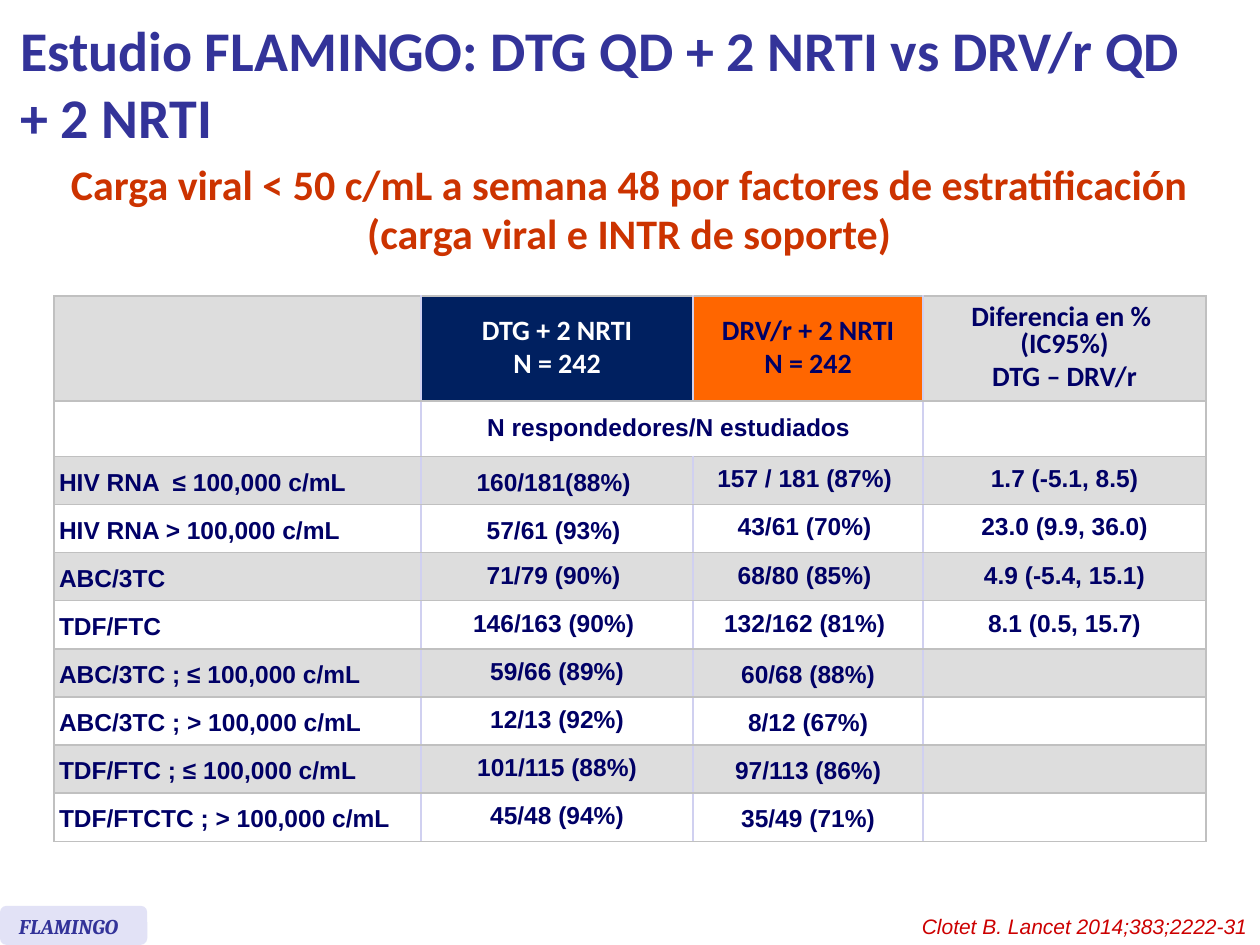
import dataclasses
import typing

import pptx
import pptx.dml.color
import pptx.enum.shapes
import pptx.enum.text
import pptx.oxml.ns
import pptx.util
from lxml import etree

Cm = pptx.util.Cm
Pt = pptx.util.Pt
ALIGN = pptx.enum.text.PP_ALIGN
MID = pptx.enum.text.MSO_ANCHOR.MIDDLE
NAVY, WHITE, GRAY, EDGE, LILAC = "000066", "FFFFFF", "DDDDDD", "C0C0C0", "D0D0F0"


@dataclasses.dataclass(frozen=True)
class Style:
    size: float
    name: str
    tint: str
    bold: bool = True
    italic: bool = False
    align: typing.Any = ALIGN.LEFT
    lead: typing.Any = None
    gap: float = 0


class Box(typing.NamedTuple):
    text: str
    place: tuple[float, float, float, float]
    style: Style
    wrap: bool = True


class Row(typing.NamedTuple):
    label: str
    first: str
    second: str
    diff: str = ""


HEAD = Style(16, "Calibri", NAVY, align=ALIGN.CENTER, lead=0.8, gap=3.2)
BODY = Style(14, "Arial", NAVY, align=ALIGN.CENTER, lead=0.9)
FIXED = dataclasses.replace(BODY, lead=Pt(18.2))
LABEL = dataclasses.replace(FIXED, align=ALIGN.LEFT)

TITLE = Box("Estudio FLAMINGO: DTG QD + 2 NRTI vs DRV/r QD\n+ 2 NRTI",
            (0.15, 0.13, 24.26, 3.07), Style(32, "Calibri", "333399"))
NOTES = [
    Box("Carga viral < 50 c/mL a semana 48 por factores de estratificación\r"
        "(carga viral e INTR de soporte)", (0.66, 3.12, 24.05, 2.26),
        Style(24, "Calibri", "CC3300", align=ALIGN.CENTER, lead=Pt(27.6)), False),
    Box("Clotet B. Lancet 2014;383;2222-31", (17.78, 18.29, 7.62, 0.76),
        Style(12, "Arial", "CC0000", False, True, ALIGN.RIGHT)),
]
BADGE = Box("FLAMINGO", (0.13, 18.29, 2.84, 0.76),
            Style(12, "Cambria", "333399", True, True))

HEADS = ["", "DTG + 2 NRTI\rN = 242", "DRV/r + 2 NRTI\rN = 242",
         "Diferencia en % \n(IC95%)\rDTG – DRV/r"]
FILLS = [GRAY, "002060", "FF6600", GRAY]
ROWS = [
    Row("HIV RNA  ≤ 100,000 c/mL", "160/181(88%) ", "157 / 181 (87%) ", "1.7 (-5.1, 8.5)"),
    Row("HIV RNA > 100,000 c/mL", "57/61 (93%) ", "43/61 (70%) ", "23.0 (9.9, 36.0)"),
    Row("ABC/3TC", "71/79 (90%) ", "68/80 (85%) ", "4.9 (-5.4, 15.1)"),
    Row("TDF/FTC", "146/163 (90%) ", "132/162 (81%) ", "8.1 (0.5, 15.7)"),
    Row("ABC/3TC ; ≤ 100,000 c/mL", "59/66 (89%)", "60/68 (88%)"),
    Row("ABC/3TC ; > 100,000 c/mL", "12/13 (92%)", "8/12 (67%)"),
    Row("TDF/FTC ; ≤ 100,000 c/mL", "101/115 (88%)", "97/113 (86%)"),
    Row("TDF/FTCTC ; > 100,000 c/mL", "45/48 (94%)", "35/49 (71%)"),
]
WIDTHS = [7.4, 5.48, 4.64, 5.7]
HEIGHTS = [2.11, 1.12] + [0.97] * len(ROWS)


def put(item: typing.Any, values: dict[str, typing.Any]) -> None:
    for key, value in values.items():
        setattr(item, key, value)


def tint(form: typing.Any, code: str) -> None:
    form.solid()
    form.fore_color.rgb = pptx.dml.color.RGBColor.from_string(code)


def write(frame: typing.Any, text: str, style: Style) -> None:
    for i, line in enumerate(text.split("\r")):
        para = frame.add_paragraph() if i else frame.paragraphs[0]
        put(para, {"alignment": style.align, "line_spacing": style.lead,
                   "space_before": Pt(style.gap if i else 0)})
        put(para.font, {"size": Pt(style.size)})
        for j, part in enumerate(line.split("\n")):
            if j:
                para.add_line_break()
            if part:
                run = para.add_run()
                run.text = part
                put(run.font, {"size": Pt(style.size), "name": style.name,
                               "bold": style.bold, "italic": style.italic})
                tint(run.font.fill, style.tint)


def note(shapes: typing.Any, box: Box) -> None:
    frame = shapes.add_textbox(*map(Cm, box.place)).text_frame
    frame.word_wrap = box.wrap
    write(frame, box.text, box.style)


def edge(cell: typing.Any, side: str, code: str) -> None:
    qn = pptx.oxml.ns.qn
    line = etree.Element(qn(f"a:ln{side}"), w=str(Pt(1)))
    fill = etree.SubElement(line, qn("a:solidFill"))
    etree.SubElement(fill, qn("a:srgbClr"), val=code)
    props = cell._tc.get_or_add_tcPr()
    props.insert("LRTB".index(side), line)


def fill(cell: typing.Any, text: str, style: Style, code: str, col: int) -> None:
    put(cell, {"vertical_anchor": MID, **{f"margin_{side}": Cm(0.1)
               for side in ("left", "right", "top", "bottom")}})
    write(cell.text_frame, text, style)
    tint(cell.fill, code)
    last = len(WIDTHS) - 1
    for side, line in zip("LRTB", (EDGE if col == 0 else LILAC,
                                   EDGE if col == last else LILAC, EDGE, EDGE)):
        edge(cell, side, line)


def pick(row: int, col: int) -> Style:
    if col == 0:
        return LABEL
    return FIXED if (col == 1 and row < 2) or (col == 2 and row > 3) else BODY


def grid(shapes: typing.Any) -> None:
    table = shapes.add_table(len(HEIGHTS), len(WIDTHS), Cm(1.09), Cm(5.97),
                             Cm(sum(WIDTHS)), Cm(sum(HEIGHTS))).table
    put(table, {"first_row": False, "horz_banding": False})
    for col, width in zip(table.columns, WIDTHS):
        col.width = Cm(width)
    for row, height in zip(table.rows, HEIGHTS):
        row.height = Cm(height)
    table.cell(1, 1).merge(table.cell(1, 2))
    for col, (text, code) in enumerate(zip(HEADS, FILLS)):
        style = dataclasses.replace(HEAD, tint=WHITE) if col == 1 else HEAD
        fill(table.cell(0, col), text, style, code, col)
        fill(table.cell(1, col), "N respondedores/N estudiados " if col == 1 else "",
             BODY, WHITE, col)
        for i, row in enumerate(ROWS):
            fill(table.cell(i + 2, col), row[col], pick(i, col),
                 WHITE if i % 2 else GRAY, col)


def badge(shapes: typing.Any) -> None:
    group = shapes.add_group_shape().shapes
    plate = group.add_shape(pptx.enum.shapes.MSO_SHAPE.ROUNDED_RECTANGLE,
                            Cm(0), Cm(18.26), Cm(2.97), Cm(0.79))
    plate.adjustments[0] = 0.17
    plate.shadow.inherit = False
    tint(plate.fill, "E2E2F6")
    plate.line.fill.background()
    note(group, BADGE)


def main() -> None:
    deck = pptx.Presentation()
    put(deck, {"slide_width": Cm(25.4), "slide_height": Cm(19.05)})
    slide = deck.slides.add_slide(deck.slide_layouts[5])
    title = slide.shapes.title
    put(title, dict(zip(("left", "top", "width", "height"), map(Cm, TITLE.place))))
    put(title.text_frame, {"vertical_anchor": MID, "word_wrap": True,
                           "auto_size": pptx.enum.text.MSO_AUTO_SIZE.NONE})
    write(title.text_frame, TITLE.text, TITLE.style)
    for box in NOTES:
        note(slide.shapes, box)
    badge(slide.shapes)
    grid(slide.shapes)
    deck.save("out.pptx")


if __name__ == "__main__":
    main()
